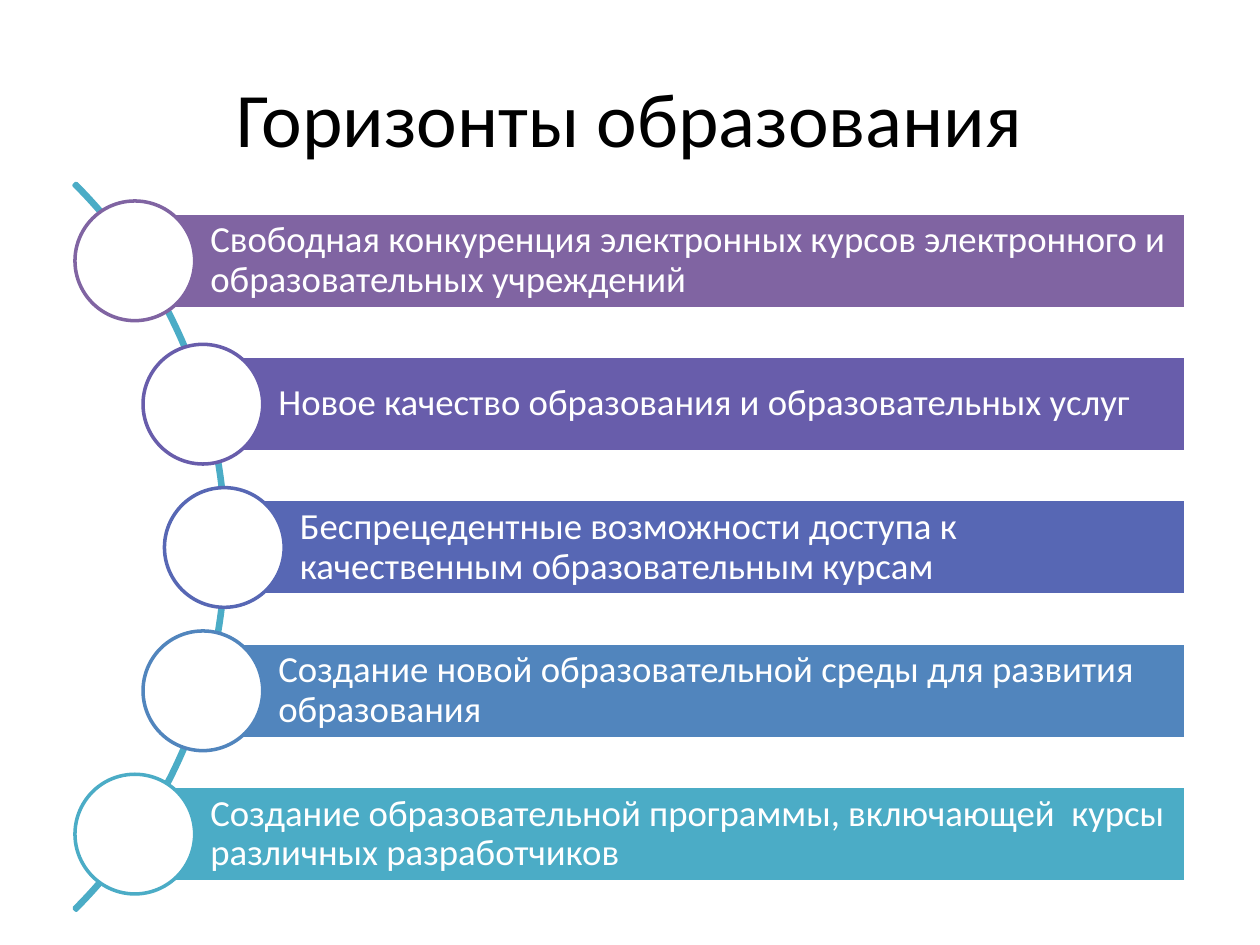
from dataclasses import dataclass

from pptx import Presentation
from pptx.dml.color import RGBColor
from pptx.enum.shapes import MSO_SHAPE as Preset
from pptx.enum.text import MSO_ANCHOR as Anchor, PP_ALIGN as Align
from pptx.shapes.autoshape import Shape
from pptx.slide import Slide
from pptx.util import Inches, Pt

WHITE = RGBColor(0xFF, 0xFF, 0xFF)
BLACK = RGBColor(0x00, 0x00, 0x00)
PURPLE = RGBColor(0x80, 0x64, 0xA2)
VIOLET = RGBColor(0x68, 0x5D, 0xAB)
INDIGO = RGBColor(0x57, 0x67, 0xB4)
BLUE = RGBColor(0x51, 0x85, 0xBD)
TEAL = RGBColor(0x4B, 0xAC, 0xC6)

FONT = "Calibri"
BAR_RIGHT = 9.41
BAR_HEIGHT = 0.76
FIRST_TOP, LAST_TOP = 1.69, 6.24
CIRCLE_SIZE = 0.95
ARC_LEFT, ARC_TOP, ARC_SIZE = -6.36, 0.26, 8.16


@dataclass(frozen=True)
class Horizon:
    text: str
    color: RGBColor
    left: float


HORIZONS = [
    Horizon("Свободная конкуренция электронных курсов электронного и "
            "образовательных учреждений", PURPLE, 1.07),
    Horizon("Новое качество образования и образовательных услуг", VIOLET, 1.61),
    Horizon("Беспрецедентные возможности доступа к качественным "
            "образовательным курсам", INDIGO, 1.78),
    Horizon("Создание новой образовательной среды для развития образования",
            BLUE, 1.61),
    Horizon("Создание образовательной программы, включающей  курсы "
            "различных разработчиков", TEAL, 1.07),
]


def add_outlined(page: Slide, preset: Preset, left: float, top: float,
                 width: float, height: float, line: RGBColor,
                 fill: RGBColor | None = None) -> Shape:
    """Add a shadowless preset shape; without a fill colour it is hollow."""
    shape = page.shapes.add_shape(
        preset, Inches(left), Inches(top), Inches(width), Inches(height))
    shape.shadow.inherit = False
    if fill is None:
        shape.fill.background()
    else:
        shape.fill.solid()
        shape.fill.fore_color.rgb = fill
    shape.line.color.rgb = line
    shape.line.width = Pt(2)
    return shape


def write(box: Shape, text: str, size: int, color: RGBColor, align: Align) -> None:
    frame = box.text_frame
    frame.word_wrap = True
    frame.vertical_anchor = Anchor.MIDDLE
    para = frame.paragraphs[0]
    para.text = text
    para.alignment = align
    para.font.name = FONT
    para.font.size = Pt(size)
    para.font.color.rgb = color


def add_title(page: Slide, text: str) -> None:
    box = page.shapes.add_textbox(Inches(0.5), Inches(0.3), Inches(9), Inches(1.25))
    write(box, text, 44, BLACK, Align.CENTER)


def add_arc(page: Slide) -> None:
    arc = add_outlined(page, Preset.BLOCK_ARC, ARC_LEFT, ARC_TOP,
                       ARC_SIZE, ARC_SIZE, TEAL)
    for index, value in enumerate((189, 27, 0.003)):
        arc.adjustments[index] = value


def add_horizon(page: Slide, horizon: Horizon, top: float) -> None:
    """Add a bar with its text, and the circle centred on its left edge."""
    bar = add_outlined(page, Preset.RECTANGLE, horizon.left, top,
                       BAR_RIGHT - horizon.left, BAR_HEIGHT, WHITE, horizon.color)
    write(bar, horizon.text, 21, WHITE, Align.LEFT)
    frame = bar.text_frame
    frame.margin_left = Inches(0.6)
    frame.margin_top = frame.margin_right = frame.margin_bottom = Inches(0.06)
    frame.paragraphs[0].line_spacing = 0.9
    add_outlined(page, Preset.OVAL, horizon.left - CIRCLE_SIZE / 2,
                 top + (BAR_HEIGHT - CIRCLE_SIZE) / 2,
                 CIRCLE_SIZE, CIRCLE_SIZE, horizon.color, WHITE)


def main() -> None:
    deck = Presentation()
    deck.slide_width, deck.slide_height = Inches(10), Inches(7.5)
    page = deck.slides.add_slide(deck.slide_layouts[6])
    add_title(page, "Горизонты образования")
    add_arc(page)
    pitch = (LAST_TOP - FIRST_TOP) / (len(HORIZONS) - 1)
    for row, horizon in enumerate(HORIZONS):
        add_horizon(page, horizon, FIRST_TOP + row * pitch)
    deck.save("out.pptx")


if __name__ == "__main__":
    main()
